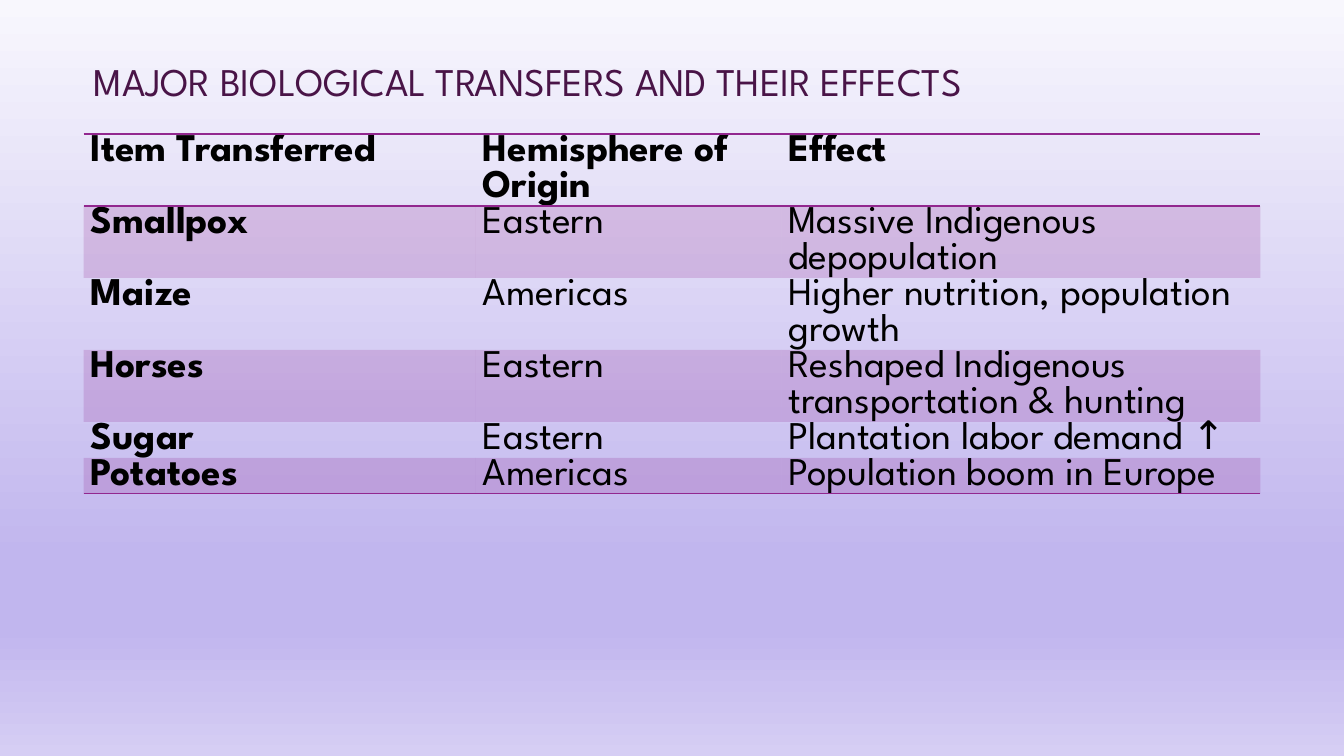
from lxml import etree
from pptx import Presentation
from pptx.dml.color import RGBColor
from pptx.enum import text
from pptx.oxml import parse_xml
from pptx.oxml.ns import nsdecls, qn
from pptx.util import Inches, Pt

PLUM = RGBColor(0x49, 0x14, 0x47)
MAGENTA = RGBColor(0x92, 0x27, 0x8F)
BLACK = RGBColor(0, 0, 0)
FONT = "League Spartan"
NO_STYLE = "{2D5ABB26-0587-4C30-8999-92F81FD0307C}"
BACKDROP_STOPS = [(0, "F8F7FD"), (74, "C1B6EE"), (83, "C1B6EE"), (100, "D6CEF4")]

transfers = [
    ("Item Transferred", "Hemisphere of Origin", "Effect"),
    ("Smallpox", "Eastern", "Massive Indigenous depopulation"),
    ("Maize", "Americas", "Higher nutrition, population growth"),
    ("Horses", "Eastern", "Reshaped Indigenous transportation & hunting"),
    ("Sugar", "Eastern", "Plantation labor demand ↑"),
    ("Potatoes", "Americas", "Population boom in Europe"),
]
column_widths = [3.89, 3.03, 4.75]
row_heights = [0.71, 0.71, 0.71, 0.71, 0.35, 0.35]


def set_font(font, color, bold):
    for name, value in {"name": FONT, "size": Pt(28), "bold": bold}.items():
        setattr(font, name, value)
    font.color.rgb = color


def add_rule(cell, edge):
    cell._tc.get_or_add_tcPr().insert(0, parse_xml(
        f'<a:{edge} {nsdecls("a")} w="12700"><a:solidFill>'
        f'<a:srgbClr val="{MAGENTA}"/></a:solidFill></a:{edge}>'))


prs = Presentation()
prs.slide_width, prs.slide_height = Inches(13.33), Inches(7.5)
slide = prs.slides.add_slide(prs.slide_layouts[5])

# Lavender gradient backdrop, top to bottom
backdrop = slide.background.fill
backdrop.gradient()
backdrop.gradient_angle = 270
stop_list = slide.background._cSld.find(".//" + qn("a:gsLst"))
for stop in list(stop_list):
    stop_list.remove(stop)
for percent, color in BACKDROP_STOPS:
    stop = etree.SubElement(stop_list, qn("a:gs"), pos=str(percent * 1000))
    etree.SubElement(stop, qn("a:srgbClr"), val=color)

# Title
title = slide.shapes.title
title.left, title.top = Inches(0.83), Inches(0.42)
title.width, title.height = Inches(11.67), Inches(0.67)
title.text_frame.text = "MAJOR BIOLOGICAL TRANSFERS AND THEIR EFFECTS"
title.text_frame.vertical_anchor = text.MSO_ANCHOR.BOTTOM
title.text_frame.auto_size = text.MSO_AUTO_SIZE.NONE
heading = title.text_frame.paragraphs[0]
heading.alignment = text.PP_ALIGN.LEFT
heading.line_spacing = 0.9
set_font(heading.runs[0].font, PLUM, False)

# Table of transfers
table = slide.shapes.add_table(
    len(transfers), len(column_widths), Inches(0.83), Inches(1.33),
    Inches(sum(column_widths)), Inches(sum(row_heights))).table
table._tbl.tblPr.find(qn("a:tableStyleId")).text = NO_STYLE
for column, width in zip(table.columns, column_widths):
    column.width = Inches(width)
for row, height in zip(table.rows, row_heights):
    row.height = Inches(height)

last = len(transfers) - 1
for r, entries in enumerate(transfers):
    for c, entry in enumerate(entries):
        cell = table.cell(r, c)
        cell.text = entry
        cell.margin_left = cell.margin_right = Inches(0.07)
        cell.margin_top = cell.margin_bottom = 0
        set_font(cell.text_frame.paragraphs[0].runs[0].font, BLACK, r == 0 or c == 0)

        # Translucent band on every other row
        if r % 2:
            cell.fill.solid()
            cell.fill.fore_color.rgb = MAGENTA
            tint = cell._tc.tcPr.find(".//" + qn("a:srgbClr"))
            etree.SubElement(tint, qn("a:alpha"), val="20000")
        else:
            cell.fill.background()

        # Rules around the header and under the last row
        if r in (0, last):
            add_rule(cell, "lnB")
        if r == 0:
            add_rule(cell, "lnT")

prs.save("out.pptx")
